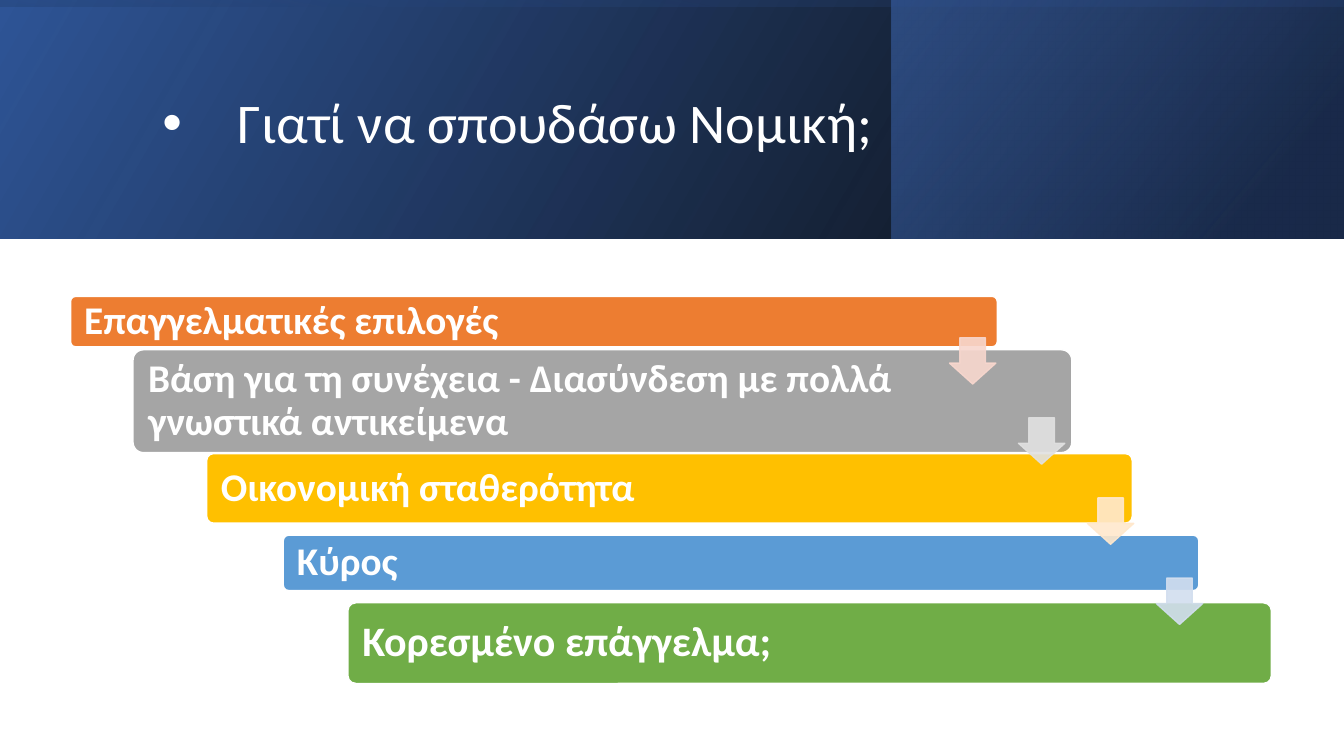
from pptx import Presentation, util as u
from pptx.dml.color import RGBColor
from pptx.enum import shapes, text
from pptx.oxml import parse_xml
from pptx.oxml.ns import nsdecls

WHITE = RGBColor(0xFF, 0xFF, 0xFF)
BLACK = RGBColor(0x00, 0x00, 0x00)
BLUE = RGBColor(0x2F, 0x55, 0x97)
NAVY = RGBColor(0x20, 0x38, 0x64)
BRIGHT_BLUE = RGBColor(0x44, 0x72, 0xC4)
ORANGE = RGBColor(0xED, 0x7D, 0x31)
GRAY = RGBColor(0xA5, 0xA5, 0xA5)
GOLD = RGBColor(0xFF, 0xC0, 0x00)
SKY = RGBColor(0x5B, 0x9B, 0xD5)
GREEN = RGBColor(0x70, 0xAD, 0x47)
ARROW_COLORS = [
    RGBColor(0xF8, 0xD7, 0xCE),
    RGBColor(0xE1, 0xE1, 0xE1),
    RGBColor(0xFF, 0xE8, 0xCC),
    RGBColor(0xD2, 0xDE, 0xEF),
]

presentation = Presentation()
presentation.slide_width = u.Inches(13.33)
presentation.slide_height = u.Inches(7.5)
column = presentation.slide_width / 100
row = presentation.slide_height / 100
slide = presentation.slides.add_slide(presentation.slide_layouts[5])


def add_block(kind, left, top, width, height):
    shape = slide.shapes.add_shape(
        kind, int(left * column), int(top * row), int(width * column), int(height * row))
    shape.shadow.inherit = False
    return shape


def format_text(paragraph, size, bold):
    paragraph.alignment = text.PP_ALIGN.LEFT
    paragraph.line_spacing = 0.9
    font = paragraph.runs[0].font
    font.name = "Calibri"
    font.size = u.Pt(size)
    font.bold = bold
    font.color.rgb = WHITE


header_layers = [
    ((0, 0, 100, 31.6), 0, 330, [(0, BLACK, 96), (100, BLUE, 100)]),
    ((66.32, 0, 33.63, 31.6), 0, 320, [(19, NAVY, 68), (100, BRIGHT_BLUE, 48)]),
    ((41.11, -73.07, 17.78, 177.73), 270, 350, [(23, BLUE, 16), (99, BLACK, 45)]),
]
for place, rotation, angle, stops in header_layers:
    layer = add_block(shapes.MSO_SHAPE.RECTANGLE, *place)
    layer.rotation = rotation
    layer.line.fill.background()
    layer.fill.background()
    properties = layer._element.spPr
    properties.xfrm.set("flipH", "1")
    stop_list = "".join(
        f'<a:gs pos="{position * 1000}"><a:srgbClr val="{color}">'
        f'<a:alpha val="{alpha * 1000}"/></a:srgbClr></a:gs>'
        for position, color, alpha in stops)
    gradient = parse_xml(
        f'<a:gradFill {nsdecls("a")} rotWithShape="1"><a:gsLst>{stop_list}</a:gsLst>'
        f'<a:lin ang="{angle * 60000}" scaled="0"/></a:gradFill>')
    properties.replace(properties.find("{*}noFill"), gradient)

title = slide.shapes.title
title.left, title.top = int(11.33 * column), int(5.07 * row)
title.width, title.height = int(79.75 * column), int(22.93 * row)
title.text_frame.text = "Γιατί να σπουδάσω Νομική;"
title.text_frame.auto_size = text.MSO_AUTO_SIZE.NONE
title.text_frame.vertical_anchor = text.MSO_ANCHOR.MIDDLE
title_paragraph = title.text_frame.paragraphs[0]
format_text(title_paragraph, 40, False)
indents = title_paragraph._p.get_or_add_pPr()
indents.set("marL", str(u.Inches(0.75)))
indents.set("indent", str(u.Inches(-0.75)))
indents.append(parse_xml(f'<a:buFont {nsdecls("a")} typeface="Arial"/>'))
indents.append(parse_xml(f'<a:buChar {nsdecls("a")} char="•"/>'))
slide.shapes._spTree.append(title._element)

steps = [
    ("Επαγγελματικές επιλογές", ORANGE, 28, (5.25, 39.2, 68.95, 6.67)),
    ("Βάση για τη συνέχεια - Διασύνδεση με πολλά γνωστικά αντικείμενα", GRAY, 28,
     (9.9, 46.27, 69.85, 13.6)),
    ("Οικονομική σταθερότητα", GOLD, 28, (15.38, 60, 68.87, 9.2)),
    ("Κύρος", SKY, 28, (21.08, 70.8, 68.12, 7.33)),
    ("Κορεσμένο επάγγελμα;", GREEN, 30, (25.88, 79.73, 68.72, 10.67)),
]
for wording, color, size, place in steps:
    bar = add_block(shapes.MSO_SHAPE.ROUNDED_RECTANGLE, *place)
    bar.adjustments[0] = 0.1
    bar.fill.solid()
    bar.fill.fore_color.rgb = color
    bar.line.color.rgb = WHITE
    bar.line.width = u.Pt(1)
    frame = bar.text_frame
    frame.text = wording
    frame.word_wrap = True
    frame.vertical_anchor = text.MSO_ANCHOR.MIDDLE
    frame.margin_left = frame.margin_top = frame.margin_bottom = u.Inches(0.12)
    frame.margin_right = u.Inches(1.25)
    format_text(frame.paragraphs[0], size, True)

for index, color in enumerate(ARROW_COLORS):
    arrow = add_block(
        shapes.MSO_SHAPE.DOWN_ARROW, 70.65 + 5.13 * index, 44.67 + 10.6 * index, 3.45, 6.13)
    arrow.adjustments[0] = 0.55
    arrow.adjustments[1] = 0.45
    arrow.fill.solid()
    arrow.fill.fore_color.rgb = color
    arrow.line.color.rgb = color
    arrow.line.width = u.Pt(1)
    for tint in arrow._element.spPr.iter("{*}srgbClr"):
        tint.append(parse_xml(f'<a:alpha {nsdecls("a")} val="90000"/>'))

presentation.save("out.pptx")
